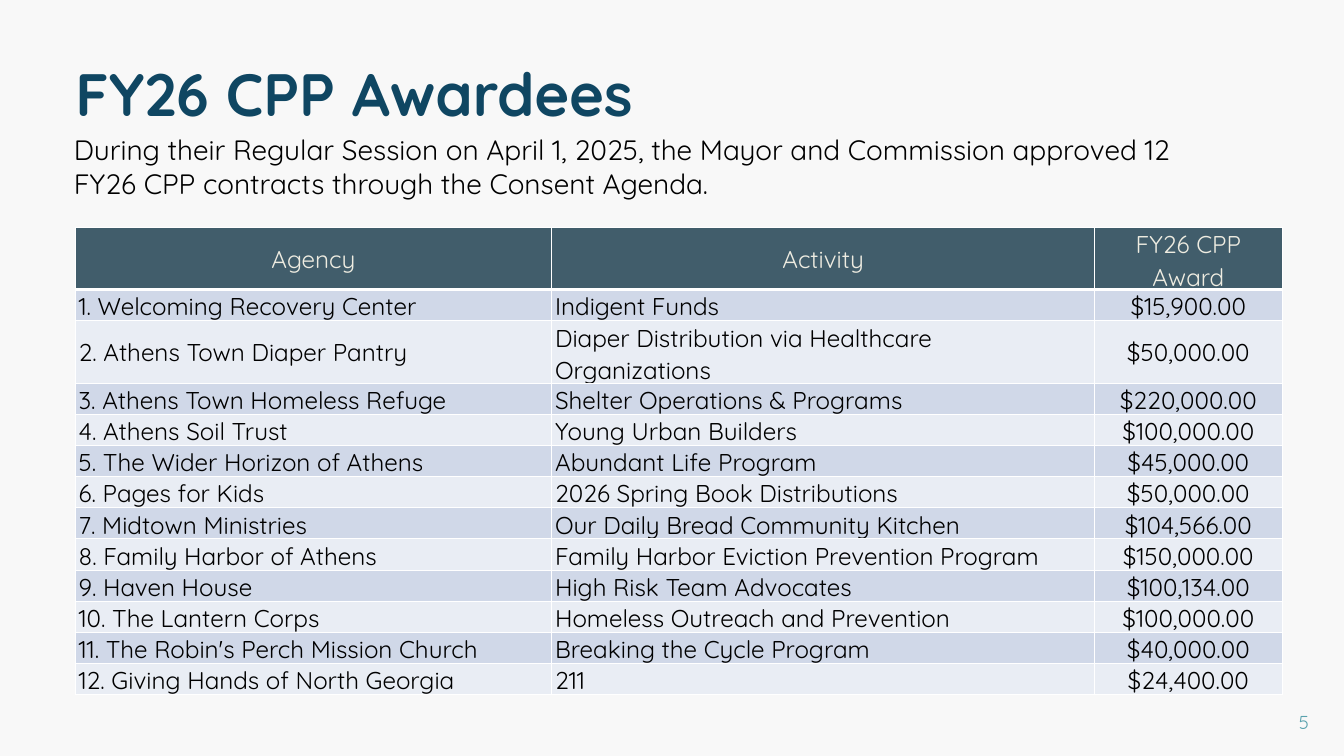
import dataclasses

import lxml.etree
import pptx
import pptx.dml.color
import pptx.enum.text
import pptx.oxml.ns
import pptx.util

Inches = pptx.util.Inches
Pt = pptx.util.Pt
Align = pptx.enum.text.PP_ALIGN
Anchor = pptx.enum.text.MSO_ANCHOR

FONT = "Quicksand"
BACKGROUND = "F8F8F8"
NAVY = "0F4662"
TEAL = "5AA2AE"
BLACK = "000000"
WHITE = "FFFFFF"
HEADER_FILL = "415D6B"
HEADER_TEXT = "EEECE1"
BAND_FILLS = ("D0D8E8", "E9EDF4")
COLUMN_WIDTHS = (7.09, 8.08, 2.79)
COLUMN_ALIGNMENTS = (Align.LEFT, Align.LEFT, Align.CENTER)
ROW_HEIGHT = 0.42
TABLE_HEIGHT = 6.58


@dataclasses.dataclass(frozen=True)
class Award:
    agency: str
    activity: str
    amount: int


@dataclasses.dataclass(frozen=True)
class Style:
    size: float
    color: str
    align: Align = Align.LEFT
    bold: bool = False
    spacing: float | pptx.util.Length | None = None


@dataclasses.dataclass(frozen=True)
class Box:
    left: float
    top: float
    width: float
    height: float


AWARDS = (
    Award("Welcoming Recovery Center", "Indigent Funds", 15900),
    Award("Athens Town Diaper Pantry", "Diaper Distribution via Healthcare Organizations", 50000),
    Award("Athens Town Homeless Refuge", "Shelter Operations & Programs", 220000),
    Award("Athens Soil Trust", "Young Urban Builders", 100000),
    Award("The Wider Horizon of Athens", "Abundant Life Program", 45000),
    Award("Pages for Kids", "2026 Spring Book Distributions", 50000),
    Award("Midtown Ministries", "Our Daily Bread Community Kitchen", 104566),
    Award("Family Harbor of Athens", "Family Harbor Eviction Prevention Program", 150000),
    Award("Haven House", "High Risk Team Advocates", 100134),
    Award("The Lantern Corps", "Homeless Outreach and Prevention", 100000),
    Award("The Robin's Perch Mission Church", "Breaking the Cycle Program", 40000),
    Award("Giving Hands of North Georgia", "211", 24400),
)


def rgb(color: str) -> pptx.dml.color.RGBColor:
    return pptx.dml.color.RGBColor.from_string(color)


def write(frame, text: str, style: Style) -> None:
    paragraph = frame.paragraphs[0]
    paragraph.alignment = style.align
    if style.spacing is not None:
        paragraph.line_spacing = style.spacing
    run = paragraph.add_run()
    run.text = text
    run.font.name = FONT
    run.font.size = Pt(style.size)
    run.font.bold = style.bold
    run.font.color.rgb = rgb(style.color)


def place(shape, box: Box) -> None:
    shape.left, shape.top = Inches(box.left), Inches(box.top)
    shape.width, shape.height = Inches(box.width), Inches(box.height)


def add_title(slide, text: str, box: Box, style: Style) -> None:
    title = slide.shapes.title
    place(title, box)
    frame = title.text_frame
    frame.margin_left = frame.margin_top = frame.margin_right = frame.margin_bottom = 0
    frame.vertical_anchor = Anchor.TOP
    frame.auto_size = pptx.enum.text.MSO_AUTO_SIZE.SHAPE_TO_FIT_TEXT
    write(frame, text, style)


def add_text(slide, text: str, box: Box, style: Style, anchor: Anchor = Anchor.TOP) -> None:
    lengths = (Inches(value) for value in dataclasses.astuple(box))
    frame = slide.shapes.add_textbox(*lengths).text_frame
    frame.word_wrap = True
    frame.vertical_anchor = anchor
    write(frame, text, style)


def set_borders(cell, bottom_width: float) -> None:
    properties = cell._tc.get_or_add_tcPr()
    widths = {"a:lnL": 1, "a:lnR": 1, "a:lnT": 1, "a:lnB": bottom_width}
    for position, (tag, width) in enumerate(widths.items()):
        line = lxml.etree.Element(pptx.oxml.ns.qn(tag), w=str(Pt(width)))
        fill = lxml.etree.SubElement(line, pptx.oxml.ns.qn("a:solidFill"))
        lxml.etree.SubElement(fill, pptx.oxml.ns.qn("a:srgbClr"), val=WHITE)
        properties.insert(position, line)


def fill_cell(cell, text: str, fill: str, style: Style, bottom_width: float = 1) -> None:
    cell.margin_left = cell.margin_right = Inches(0.05)
    cell.margin_top = cell.margin_bottom = 0
    cell.vertical_anchor = Anchor.MIDDLE
    cell.fill.solid()
    cell.fill.fore_color.rgb = rgb(fill)
    set_borders(cell, bottom_width)
    write(cell.text_frame, text, style)


def add_awards_table(slide, awards: tuple[Award, ...]) -> None:
    awards_frame = slide.shapes.add_table(
        len(awards) + 1, len(COLUMN_WIDTHS),
        Inches(1.12), Inches(3.38), Inches(sum(COLUMN_WIDTHS)), Inches(TABLE_HEIGHT),
    )
    table = awards_frame.table
    for column, width in zip(table.columns, COLUMN_WIDTHS):
        column.width = Inches(width)
    for row in table.rows:
        row.height = Inches(ROW_HEIGHT)
    awards_frame.height = Inches(TABLE_HEIGHT)

    header_style = Style(26, HEADER_TEXT, Align.CENTER, spacing=1.07)
    for index, heading in enumerate(("Agency", "Activity", "FY26 CPP Award")):
        fill_cell(table.cell(0, index), heading, HEADER_FILL, header_style, bottom_width=3)

    for number, award in enumerate(awards, start=1):
        band = BAND_FILLS[(number - 1) % len(BAND_FILLS)]
        values = (f"{number}. {award.agency}", award.activity, f"${award.amount:,.2f}")
        for index, (value, align) in enumerate(zip(values, COLUMN_ALIGNMENTS)):
            fill_cell(table.cell(number, index), value, band, Style(26, BLACK, align, spacing=1.07))


def main() -> None:
    presentation = pptx.Presentation()
    presentation.slide_width = Inches(20)
    presentation.slide_height = Inches(11.25)
    slide = presentation.slides.add_slide(presentation.slide_layouts.get_by_name("Title Only"))
    slide.background.fill.solid()
    slide.background.fill.fore_color.rgb = rgb(BACKGROUND)

    add_title(slide, "FY26 CPP Awardees", Box(1.12, 0.66, 15.39, 1.2),
              Style(64, NAVY, bold=True, spacing=Pt(89.6)))
    add_awards_table(slide, AWARDS)
    add_text(slide, "During their Regular Session on April 1, 2025, the Mayor and Commission "
             "approved 12 FY26 CPP contracts through the Consent Agenda.",
             Box(1, 1.93, 17.27, 1.11), Style(30, BLACK))
    add_text(slide, "5", Box(17.25, 10.54, 2.33, 0.4), Style(20, TEAL, Align.RIGHT), Anchor.MIDDLE)
    presentation.save("out.pptx")


if __name__ == "__main__":
    main()
